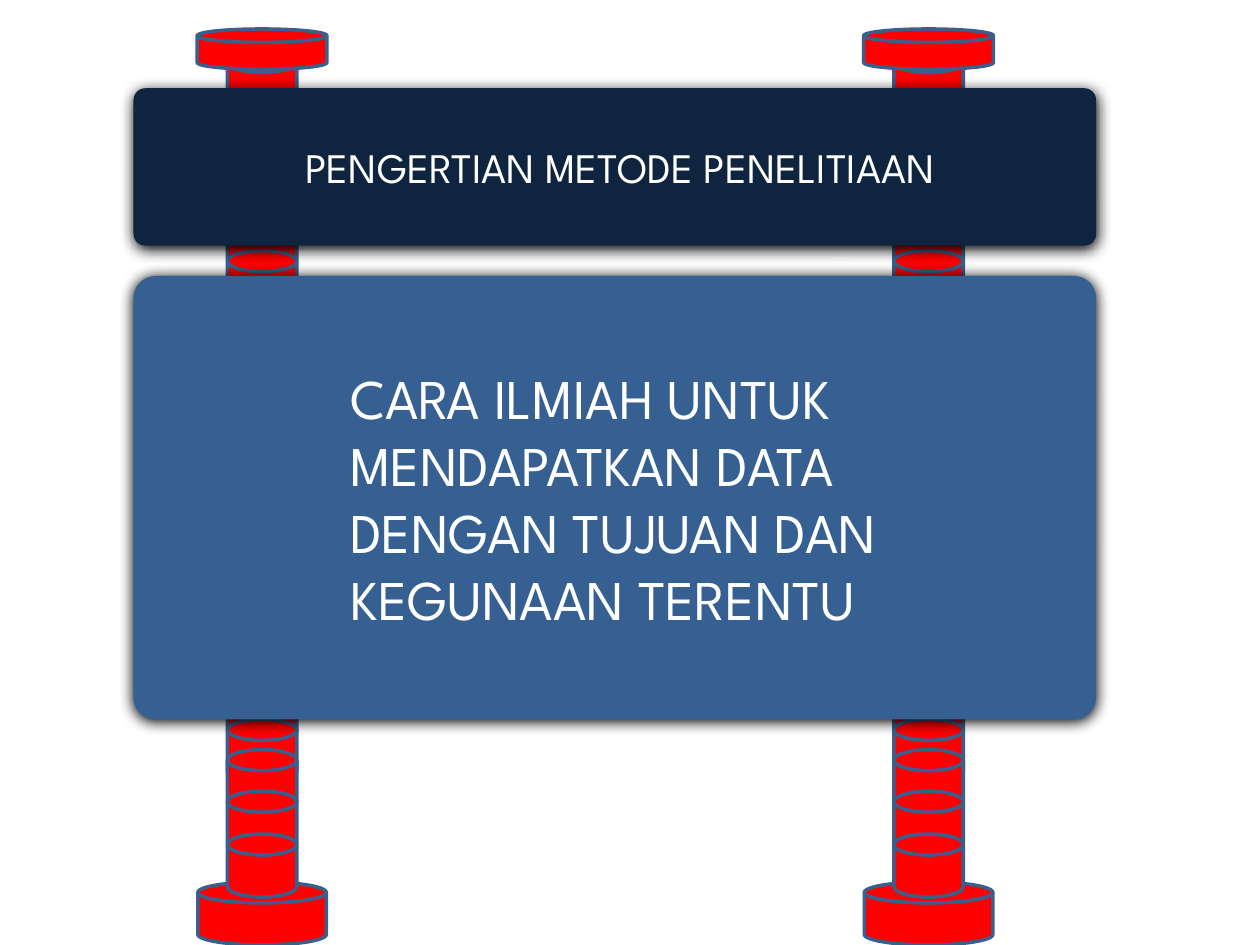
from dataclasses import dataclass

from lxml.etree import SubElement
from pptx import Presentation
from pptx.dml.color import RGBColor
from pptx.enum.shapes import MSO_SHAPE
from pptx.enum.text import MSO_ANCHOR, PP_ALIGN
from pptx.oxml.ns import qn
from pptx.shapes.autoshape import Shape
from pptx.slide import Slide
from pptx.util import Inches, Pt

FONT = "League Spartan"
WHITE = "FFFFFF"
POST_FILL = "FF0000"
POST_LINE = "3A5F8C"
DISK_HEIGHT = 0.5
RING_TOPS = (0.41, 1.65, 1.99, 5.21, 5.38, 5.71, 5.95, 6.28, 6.62)
POST_CENTERS = (2.08, 7.37)


@dataclass(frozen=True)
class Disk:
    top: float
    width: float
    height: float


@dataclass(frozen=True)
class Board:
    top: float
    height: float
    corner: float
    fill: str


POST_DISKS = (
    Disk(7, 1.02, DISK_HEIGHT),
    *(Disk(top, 0.55, DISK_HEIGHT) for top in RING_TOPS),
    Disk(0.23, 1.03, 0.32),
)
TITLE_BOARD = Board(0.7, 1.25, 0.075, "0F243E")
DEFINITION_BOARD = Board(2.19, 3.52, 0.05, "376092")


def color(value: str) -> RGBColor:
    return RGBColor.from_string(value)


def set_fill(shape: Shape, value: str) -> None:
    shape.fill.solid()
    shape.fill.fore_color.rgb = color(value)


def draw_post(slide: Slide, center: float) -> None:
    """Stack the disks of one post, from its base to its cap, in a group."""
    group = slide.shapes.add_group_shape()
    for disk in POST_DISKS:
        shape = group.shapes.add_shape(
            MSO_SHAPE.FLOWCHART_MAGNETIC_DISK,
            Inches(center - disk.width / 2), Inches(disk.top),
            Inches(disk.width), Inches(disk.height),
        )
        shape.shadow.inherit = False
        set_fill(shape, POST_FILL)
        shape.line.color.rgb = color(POST_LINE)
        shape.line.width = Pt(2)


def add_shadow(shape: Shape) -> None:
    """Give the shape a soft black shadow that falls straight down."""
    shape.shadow.inherit = False
    effects = shape._element.spPr.find(qn("a:effectLst"))
    shadow = SubElement(
        effects, qn("a:outerShdw"), blurRad=str(Pt(8.5)), dist=str(Pt(1)),
        dir="5400000", algn="t", rotWithShape="0",
    )
    SubElement(shadow, qn("a:srgbClr"), val="000000")


def draw_board(slide: Slide, board: Board) -> Shape:
    shape = slide.shapes.add_shape(
        MSO_SHAPE.ROUNDED_RECTANGLE,
        Inches(1.06), Inches(board.top), Inches(7.64), Inches(board.height),
    )
    shape.adjustments[0] = board.corner
    set_fill(shape, board.fill)
    shape.line.fill.background()
    add_shadow(shape)
    return shape


def write_text(shape: Shape, *texts: str, size: float,
               align: PP_ALIGN, indent: float = 0) -> None:
    """Write one paragraph per text, centred vertically in the shape."""
    frame = shape.text_frame
    frame.word_wrap = True
    frame.vertical_anchor = MSO_ANCHOR.MIDDLE
    for index, text in enumerate(texts):
        paragraph = frame.add_paragraph() if index else frame.paragraphs[0]
        paragraph.alignment = align
        paragraph._p.get_or_add_pPr().set("marL", str(Inches(indent)))
        run = paragraph.add_run()
        run.text = text
        run.font.name = FONT
        run.font.size = Pt(size)
        run.font.color.rgb = color(WHITE)


def main() -> None:
    presentation = Presentation()
    presentation.slide_width = Inches(10)
    presentation.slide_height = Inches(7.5)
    slide = presentation.slides.add_slide(presentation.slide_layouts[6])

    for center in reversed(POST_CENTERS):
        draw_post(slide, center)

    write_text(draw_board(slide, TITLE_BOARD), " PENGERTIAN METODE PENELITIAAN",
               size=24, align=PP_ALIGN.CENTER)
    write_text(draw_board(slide, DEFINITION_BOARD),
               "CARA ILMIAH UNTUK MENDAPATKAN DATA",
               "DENGAN TUJUAN DAN KEGUNAAN TERENTU",
               size=32, align=PP_ALIGN.LEFT, indent=1.57)

    presentation.save("out.pptx")


if __name__ == "__main__":
    main()
